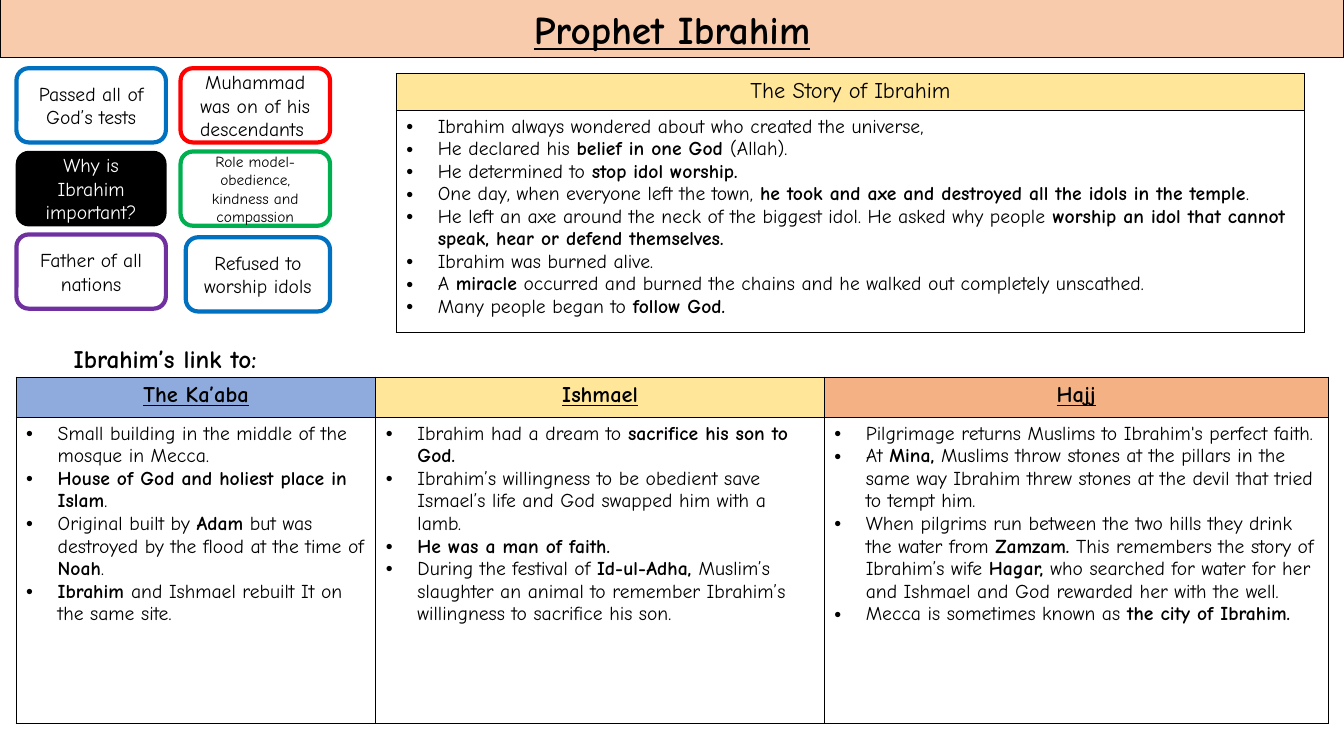
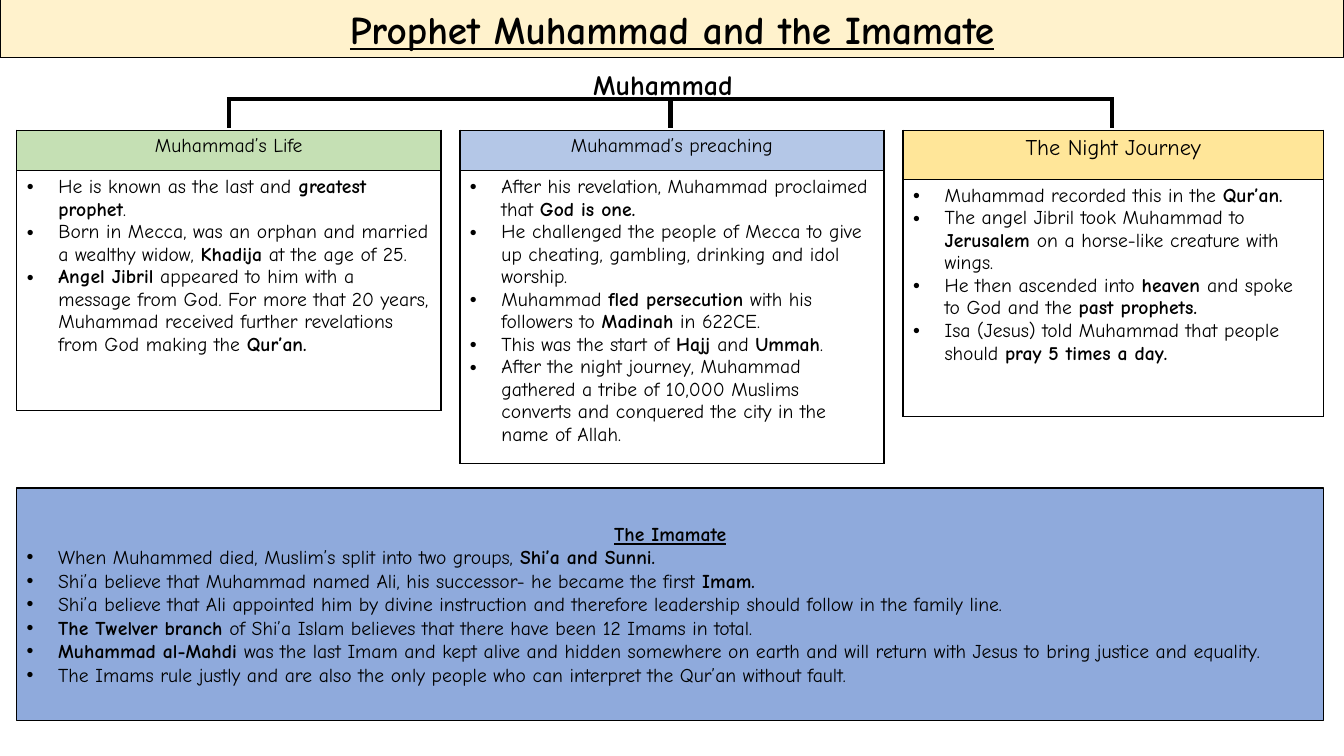
from dataclasses import dataclass
from typing import Sequence

from lxml import etree
from pptx import Presentation
from pptx.dml.color import RGBColor
from pptx.enum.shapes import MSO_CONNECTOR, MSO_SHAPE
from pptx.enum.text import MSO_ANCHOR, PP_ALIGN
from pptx.oxml.ns import qn
from pptx.util import Pt

RECTANGLE = MSO_SHAPE.RECTANGLE
ROUNDED = MSO_SHAPE.ROUNDED_RECTANGLE
STRAIGHT = MSO_CONNECTOR.STRAIGHT
MIDDLE = MSO_ANCHOR.MIDDLE
CENTER = PP_ALIGN.CENTER
LEFT = PP_ALIGN.LEFT

FONT = "Comic Neue"
BLACK, WHITE = "000000", "FFFFFF"
BLUE, YELLOW, ORANGE = "8FAADC", "FFE699", "F4B183"
SLIDE_WIDTH, SLIDE_HEIGHT = 960, 540
BODY_SIZE = 14
BULLET_INDENT = 22.5
BOLD_MARK = "**"


@dataclass
class Tile:
    text: str
    left: float
    top: float
    width: float
    line: str
    fill: str = WHITE
    color: str = BLACK
    size: float = BODY_SIZE


@dataclass
class Column:
    heading: str
    fill: str
    width: float
    points: Sequence[str]


@dataclass
class Panel:
    left: float
    top: float
    heading_height: float
    body_height: float
    columns: Sequence[Column]
    heading_size: float = BODY_SIZE
    strong_heading: bool = False


# Shared helpers
def rgb(color: str) -> RGBColor:
    return RGBColor.from_string(color)


def write(paragraph, text: str, size: float = BODY_SIZE, color: str = BLACK,
          strong: bool = False, underline: bool = False, align=CENTER) -> None:
    """Write a paragraph; text between bold marks is set in bold."""
    paragraph.alignment = align
    for index, part in enumerate(text.split(BOLD_MARK)):
        if not part:
            continue
        run = paragraph.add_run()
        run.text = part
        run.font.name = FONT
        run.font.size = Pt(size)
        run.font.bold = strong or index % 2 == 1
        run.font.underline = underline
        run.font.color.rgb = rgb(color)


def write_bullet(paragraph, text: str) -> None:
    write(paragraph, text, align=LEFT)
    properties = paragraph._p.get_or_add_pPr()
    properties.set("marL", str(Pt(BULLET_INDENT)))
    properties.set("indent", str(-Pt(BULLET_INDENT)))
    etree.SubElement(properties, qn("a:buFont"), typeface="Arial")
    etree.SubElement(properties, qn("a:buChar"), char="•")


def add_box(slide, kind, left: float, top: float, width: float, height: float,
            fill: str, line: str, line_width: float):
    shape = slide.shapes.add_shape(kind, Pt(left), Pt(top), Pt(width), Pt(height))
    shape.shadow.inherit = False
    shape.fill.solid()
    shape.fill.fore_color.rgb = rgb(fill)
    shape.line.color.rgb = rgb(line)
    shape.line.width = Pt(line_width)
    shape.text_frame.word_wrap = True
    shape.text_frame.vertical_anchor = MIDDLE
    return shape


def add_label(slide, text: str, left: float, top: float, width: float,
              height: float, size: float) -> None:
    box = slide.shapes.add_textbox(Pt(left), Pt(top), Pt(width), Pt(height))
    box.text_frame.word_wrap = True
    write(box.text_frame.paragraphs[0], text, size, strong=True)


def add_titled_slide(presentation, title: str, fill: str):
    slide = presentation.slides.add_slide(presentation.slide_layouts[6])
    band = add_box(slide, RECTANGLE, 0, 0, SLIDE_WIDTH, 41, fill, BLACK, 0.75)
    write(band.text_frame.paragraphs[0], title, 28, strong=True, underline=True)
    return slide


def add_line(slide, x1: float, y1: float, x2: float, y2: float) -> None:
    line = slide.shapes.add_connector(STRAIGHT, Pt(x1), Pt(y1), Pt(x2), Pt(y2))
    line.line.color.rgb = rgb(BLACK)
    line.line.width = Pt(3)
    etree.SubElement(line._element.spPr, qn("a:effectLst"))


def add_tile(slide, tile: Tile) -> None:
    shape = add_box(slide, ROUNDED, tile.left, tile.top, tile.width, 53,
                    tile.fill, tile.line, 1 if tile.fill == BLACK else 3)
    shape.text_frame.margin_left = shape.text_frame.margin_right = Pt(8)
    write(shape.text_frame.paragraphs[0], tile.text, tile.size, tile.color)


def style_cell(cell, fill: str) -> None:
    properties = cell._tc.get_or_add_tcPr()
    for side in ("a:lnL", "a:lnR", "a:lnT", "a:lnB"):
        border = etree.SubElement(properties, qn(side), w=str(Pt(1)))
        solid = etree.SubElement(border, qn("a:solidFill"))
        etree.SubElement(solid, qn("a:srgbClr"), val=BLACK)
    cell.fill.solid()
    cell.fill.fore_color.rgb = rgb(fill)


def write_bullets(text_frame, points: Sequence[str], first: bool = True) -> None:
    for index, point in enumerate(points):
        reuse = first and index == 0
        write_bullet(text_frame.paragraphs[0] if reuse
                     else text_frame.add_paragraph(), point)


def add_panel(slide, panel: Panel) -> None:
    width = sum(column.width for column in panel.columns)
    height = panel.heading_height + panel.body_height
    table = slide.shapes.add_table(2, len(panel.columns), Pt(panel.left),
                                   Pt(panel.top), Pt(width), Pt(height)).table
    table.first_row = table.horz_banding = False
    table.rows[0].height = Pt(panel.heading_height)
    table.rows[1].height = Pt(panel.body_height)
    for index, column in enumerate(panel.columns):
        table.columns[index].width = Pt(column.width)
        heading, body = table.cell(0, index), table.cell(1, index)
        style_cell(heading, column.fill)
        style_cell(body, WHITE)
        write(heading.text_frame.paragraphs[0], column.heading,
              panel.heading_size, strong=panel.strong_heading,
              underline=panel.strong_heading)
        write_bullets(body.text_frame, column.points)


# Slide 1
TILE_LEFTS = (11.75, 129)
TILE_TOPS = (48.75, 108.25, 167.5)
TILE_WIDTH = 106.75
TILES = (
    Tile("Passed all of God’s tests", TILE_LEFTS[0], TILE_TOPS[0], TILE_WIDTH, "0070C0"),
    Tile("Muhammad was on of his descendants ", TILE_LEFTS[1], TILE_TOPS[0],
         TILE_WIDTH, "FF0000"),
    Tile("Why is Ibrahim important?", TILE_LEFTS[0], TILE_TOPS[1], TILE_WIDTH,
         BLACK, BLACK, WHITE),
    Tile("Role model- obedience, kindness and compassion", TILE_LEFTS[1],
         TILE_TOPS[1], TILE_WIDTH, "00B050", size=11),
    Tile("Father of all nations", TILE_LEFTS[0], TILE_TOPS[2], TILE_WIDTH, "7030A0"),
    Tile("Refused to worship idols", 132.75, 169.5, 103, "0070C0"),
)

STORY = Panel(283, 52.5, 26.4, 158.4, [Column("The Story of Ibrahim", YELLOW, 649, [
    "Ibrahim always wondered about who created the universe,",
    "He declared his **belief in one God **(Allah).",
    "He determined to **stop idol worship.**",
    "One day, when everyone left the town, "
    "**he took and axe and destroyed all the idols in the temple**.",
    "He left an axe around the neck of the biggest idol. He asked why people "
    "**worship an idol that cannot speak, hear or defend themselves.**",
    "Ibrahim was burned alive.",
    "A **miracle** occurred and burned the chains and he walked out completely unscathed.",
    "Many people began to **follow God.**",
])], heading_size=16)

LINKS = Panel(11.5, 269.5, 28.8, 218.7, [
    Column("The Ka’aba", BLUE, 257, [
        "Small building in the middle of the mosque in Mecca.",
        "**House of God and holiest place in Islam**.",
        "Original built by **Adam** but was destroyed by the flood at the time of **Noah**.",
        "**Ibrahim **and Ishmael rebuilt It on the same site.",
    ]),
    Column("Ishmael", YELLOW, 320.25, [
        "Ibrahim had a dream to **sacrifice his son to God.**",
        "Ibrahim’s willingness to be obedient save Ismael’s life and God swapped him "
        "with a lamb.",
        "**He was a man of faith.**",
        "During the festival of **Id-ul-Adha, **Muslim’s slaughter an animal to remember "
        "Ibrahim’s willingness to sacrifice his son.",
    ]),
    Column("Hajj", ORANGE, 360, [
        "Pilgrimage returns Muslims to Ibrahim's perfect faith.",
        "At **Mina,** Muslims throw stones at the pillars in the same way Ibrahim threw "
        "stones at the devil that tried to tempt him.",
        "When pilgrims run between the two hills they drink the water from **Zamzam.** "
        "This remembers the story of Ibrahim’s wife **Hagar, **who searched for water "
        "for her and Ishmael and God rewarded her with the well.",
        "Mecca is sometimes known as **the city of Ibrahim.**",
    ]),
], heading_size=16, strong_heading=True)

# Slide 2
PANEL_TOP = 93
MUHAMMAD_PANELS = (
    Panel(12, PANEL_TOP, 29, 171.5, [Column("Muhammad’s Life", "C5E0B4", 303, [
        "He is known as the last and **greatest prophet**.",
        "Born in Mecca, was an orphan and married a wealthy widow, **Khadija** "
        "at the age of 25.",
        "**Angel Jibril** appeared to him with a message from God. For more that 20 years, "
        "Muhammad received further revelations from God making the **Qur’an.**",
    ])]),
    Panel(328.5, PANEL_TOP, 29, 208.5, [Column("Muhammad’s preaching", "B4C7E7", 303, [
        "After his revelation, Muhammad proclaimed that **God is one.**",
        "He challenged the people of Mecca to give up cheating, gambling, drinking and "
        "idol worship.",
        "Muhammad **fled persecution** with his followers to **Madinah** in 622CE.",
        "This was the start of **Hajj **and **Ummah**.",
        "After the night journey, Muhammad gathered a tribe of 10,000 Muslims converts "
        "and conquered the city in the name of Allah.",
    ])]),
    Panel(645, PANEL_TOP, 35.25, 169, [Column("The Night Journey", YELLOW, 300.5, [
        "Muhammad recorded this in the **Qur’an.**",
        "The angel Jibril took Muhammad to **Jerusalem **on a horse-like creature "
        "with wings.",
        "He then ascended into **heaven **and spoke to God and the **past prophets.**",
        "Isa (Jesus) told Muhammad that people should **pray 5 times a day.**",
    ])], heading_size=16),
)

IMAMATE_POINTS = (
    "When Muhammed died, Muslim’s split into two groups, **Shi’a and Sunni.**",
    "Shi’a believe that Muhammad named Ali, his successor- he became the first **Imam.**",
    "Shi’a believe that Ali appointed him by divine instruction and therefore leadership "
    "should follow in the family line.",
    "**The Twelver branch** of Shi’a Islam believes that there have been 12 Imams in total.",
    "**Muhammad al-Mahdi **was the last Imam and kept alive and hidden somewhere on earth "
    "and will return with Jesus to bring justice and equality.",
    "The Imams rule justly and are also the only people who can interpret the Qur’an "
    "without fault.",
)


def build_ibrahim(presentation) -> None:
    slide = add_titled_slide(presentation, "Prophet Ibrahim", "F8CBAD")
    add_panel(slide, LINKS)
    add_label(slide, "Ibrahim’s link to:", 18, 242, 200, 29, 18)
    for tile in TILES:
        add_tile(slide, tile)
    add_panel(slide, STORY)


def build_muhammad(presentation) -> None:
    slide = add_titled_slide(presentation, "Prophet Muhammad and the Imamate", "FFF2CC")
    for panel in MUHAMMAD_PANELS:
        add_panel(slide, panel)
    add_label(slide, "Muhammad", 180.5, 44.5, 586, 32, 20)

    # Bracket from the heading to the three panels
    bar_top, drop_bottom = 71, 91.5
    drops = (163.5, 479, 794.5)
    add_line(slide, drops[0] - 1.5, bar_top, drops[-1] + 1.5, bar_top)
    for x in drops:
        add_line(slide, x, bar_top, x, drop_bottom)

    imamate = add_box(slide, RECTANGLE, 12, 348.5, 933.5, 166, BLUE, BLACK, 1)
    write(imamate.text_frame.paragraphs[0], "The Imamate", strong=True, underline=True)
    write_bullets(imamate.text_frame, IMAMATE_POINTS, first=False)


def main() -> None:
    presentation = Presentation()
    presentation.slide_width = Pt(SLIDE_WIDTH)
    presentation.slide_height = Pt(SLIDE_HEIGHT)
    build_ibrahim(presentation)
    build_muhammad(presentation)
    presentation.save("out.pptx")


if __name__ == "__main__":
    main()
